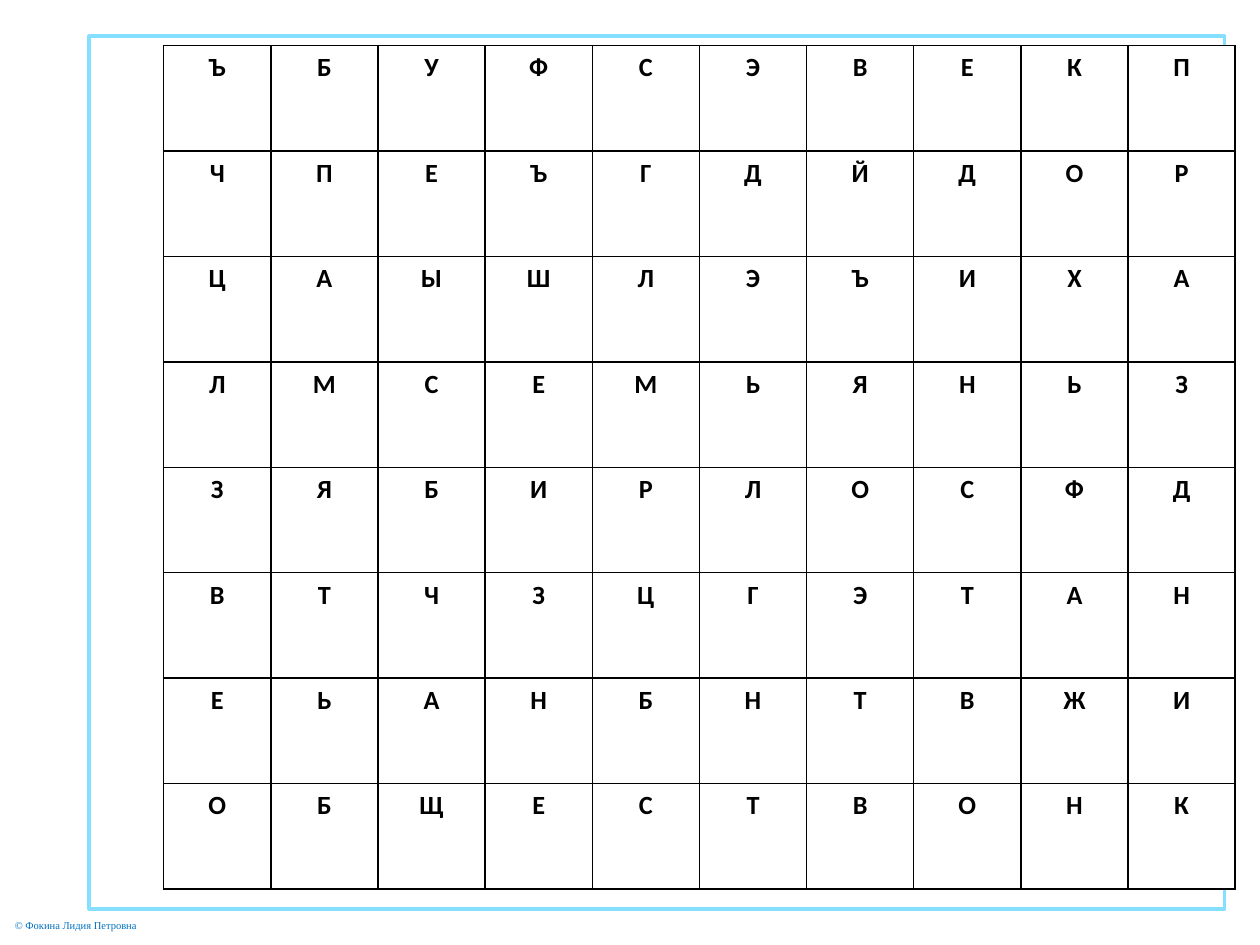
from lxml.etree import SubElement
from pptx import Presentation
from pptx.dml.color import RGBColor
from pptx.enum.shapes import MSO_SHAPE
from pptx.enum.text import MSO_ANCHOR, MSO_AUTO_SIZE, PP_ALIGN
from pptx.oxml.ns import qn
from pptx.util import Cm, Pt

COLORS = {"paper": "FFFFFF", "frame": "85DFFF", "ink": "000000", "credit": "0070C0"}
LETTER_ROWS = [
    "ЪБУФСЭВЕКП",
    "ЧПЕЪГДЙДОР",
    "ЦАЫШЛЭЪИХА",
    "ЛМСЕМЬЯНЬЗ",
    "ЗЯБИРЛОСФД",
    "ВТЧЗЦГЭТАН",
    "ЕЬАНБНТВЖИ",
    "ОБЩЕСТВОНК",
]


def color(name):
    return RGBColor.from_string(COLORS[name])


def set_font(p, name, size, color_name, bold=False):
    p.font.name = name
    p.font.size = Pt(size)
    p.font.bold = bold
    p.font.color.rgb = color(color_name)


def add_frame(s, left, top, width, height):
    sp = s.shapes.add_shape(MSO_SHAPE.RECTANGLE, Cm(left), Cm(top), Cm(width), Cm(height))
    sp.shadow.inherit = False
    sp.fill.solid()
    sp.fill.fore_color.rgb = color("paper")
    fill_color = sp.fill._xPr.find(qn("a:solidFill")).find(qn("a:srgbClr"))
    SubElement(fill_color, qn("a:alpha"), val="70000")
    sp.line.color.rgb = color("frame")
    sp.line.width = Pt(2)


def add_credit(s, left, top, width, height):
    tf = s.shapes.add_textbox(Cm(left), Cm(top), Cm(width), Cm(height)).text_frame
    tf.word_wrap = False
    tf.auto_size = MSO_AUTO_SIZE.SHAPE_TO_FIT_TEXT
    tf.vertical_anchor = MSO_ANCHOR.MIDDLE
    p = tf.paragraphs[0]
    p.text = "© Фокина Лидия Петровна"
    set_font(p, "Times New Roman", 6, "credit")


def add_borders(cell):
    tc_pr = cell._tc.get_or_add_tcPr()
    for side in ("lnL", "lnR", "lnT", "lnB"):
        ln = SubElement(tc_pr, qn(f"a:{side}"), w=str(Pt(1)))
        fill = SubElement(ln, qn("a:solidFill"))
        SubElement(fill, qn("a:srgbClr"), val=COLORS["ink"])


def add_letter_grid(s, left, top, width, height):
    n_rows, n_cols = len(LETTER_ROWS), len(LETTER_ROWS[0])
    table = s.shapes.add_table(
        n_rows, n_cols, Cm(left), Cm(top), Cm(width), Cm(height)
    ).table
    table.first_row = False
    table.horz_banding = False
    for i, letters in enumerate(LETTER_ROWS):
        for j, letter in enumerate(letters):
            cell = table.cell(i, j)
            add_borders(cell)
            cell.fill.solid()
            cell.fill.fore_color.rgb = color("paper")
            p = cell.text_frame.paragraphs[0]
            p.text = letter
            p.alignment = PP_ALIGN.CENTER
            set_font(p, "Calibri", 15, "ink", bold=True)


def main():
    prs = Presentation()
    prs.slide_width, prs.slide_height = Cm(25.4), Cm(19.05)
    s = prs.slides.add_slide(prs.slide_layouts[6])
    add_frame(s, 1.8, 0.73, 22.89, 17.6)
    add_credit(s, 0.05, 18.4, 3.05, 0.5)
    add_letter_grid(s, 3.3, 0.92, 21.6, 17)
    prs.save("out.pptx")


if __name__ == "__main__":
    main()
